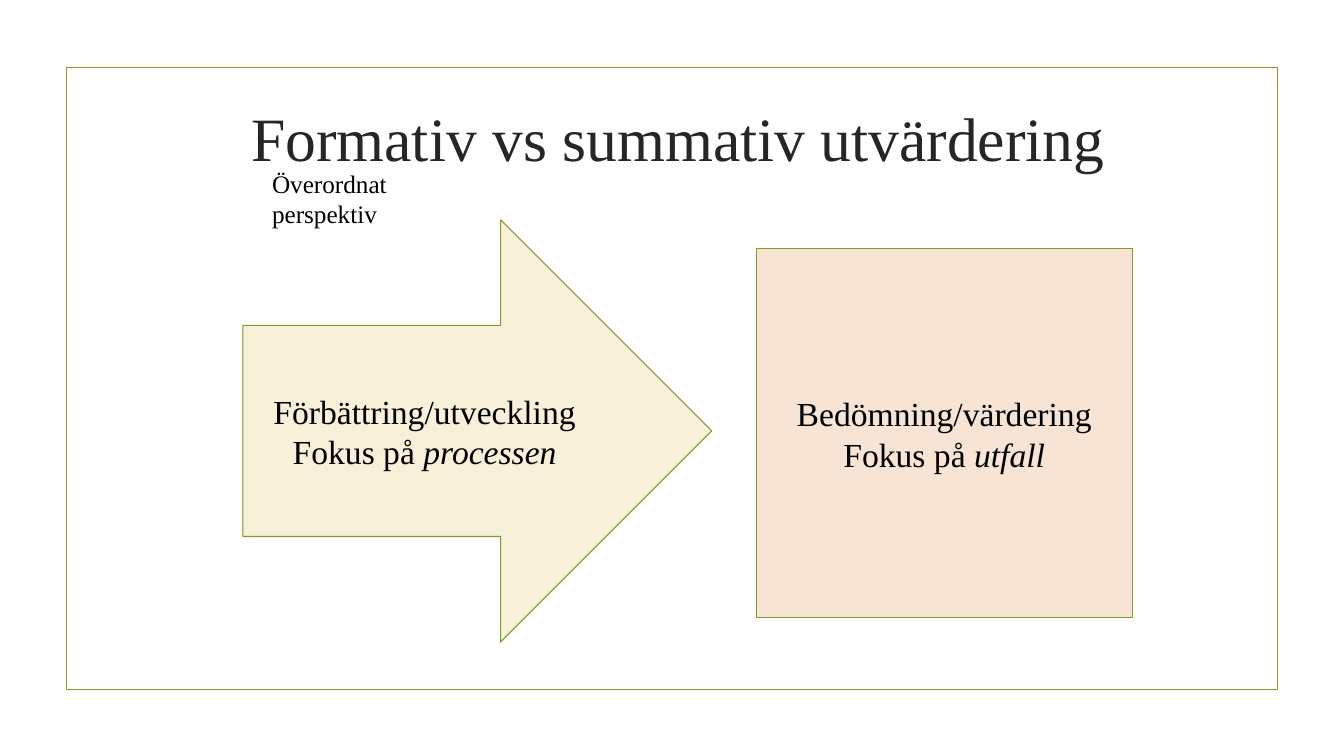
from pptx import Presentation
from pptx import util as u
from pptx.dml.color import RGBColor
from pptx.enum import shapes, text

WIDTH, HEIGHT = 13.33, 7.5
FONT = "Times New Roman"
COLOURS = {"olive": "83992A", "peach": "F7E4D4", "cream": "F8F0D9",
           "title": "262626", "black": "000000"}

# Content: each paragraph is a list of (text, italic) runs
TITLE = [[("Formativ vs summativ utvärdering", False)]]
PERSPECTIVE = [[("Överordnat perspektiv", False)]]
SUMMATIVE = [[("Bedömning/värdering", False)],
             [("Fokus på ", False), ("utfall", True)]]
FORMATIVE = [[("Förbättring/utveckling", False)],
             [("Fokus på ", False), ("processen", True)]]

# Places: left, top, width, height in inches
MARGIN = 0.66
FRAME = (MARGIN, MARGIN + 0.01, WIDTH - 2 * MARGIN, HEIGHT - 2 * MARGIN - 0.01)
TITLE_BOX = (2.23, 0.73, 9, 1.25)
SQUARE = (7.5, 2.47, 3.73, 3.66)
ARROW = (2.41, 2.18, 4.65, 4.19)
PERSPECTIVE_BOX = (2.6, 1.62, 1.5, 0.7)

presentation = Presentation()
presentation.slide_width = u.Inches(WIDTH)
presentation.slide_height = u.Inches(HEIGHT)
slide = presentation.slides.add_slide(presentation.slide_layouts[6])


def colour(name):
    return RGBColor.from_string(COLOURS[name])


def write(shape, paragraphs, size=24, ink="black",
          align=text.PP_ALIGN.CENTER, anchor=text.MSO_ANCHOR.MIDDLE):
    frame = shape.text_frame
    frame.word_wrap = True
    frame.vertical_anchor = anchor
    for index, runs in enumerate(paragraphs):
        paragraph = frame.add_paragraph() if index else frame.paragraphs[0]
        paragraph.alignment = align
        for words, italic in runs:
            run = paragraph.add_run()
            run.text = words
            run.font.name = FONT
            run.font.size = u.Pt(size)
            run.font.italic = italic
            run.font.color.rgb = colour(ink)


def add_outline(kind, place, line_width=0.75, fill=None):
    shape = slide.shapes.add_shape(kind, *map(u.Inches, place))
    shape.shadow.inherit = False
    if fill:
        shape.fill.solid()
        shape.fill.fore_color.rgb = colour(fill)
    else:
        shape.fill.background()
    shape.line.color.rgb = colour("olive")
    shape.line.width = u.Pt(line_width)
    return shape


def add_text_box(place):
    return slide.shapes.add_textbox(*map(u.Inches, place))


# Frame and title
add_outline(shapes.MSO_SHAPE.RECTANGLE, FRAME, line_width=1.25)
write(add_text_box(TITLE_BOX), TITLE, size=44, ink="title")

# Summative square and formative arrow
write(add_outline(shapes.MSO_SHAPE.RECTANGLE, SQUARE, fill="peach"), SUMMATIVE)
write(add_outline(shapes.MSO_SHAPE.RIGHT_ARROW, ARROW, fill="cream"), FORMATIVE)

# Perspective label
write(add_text_box(PERSPECTIVE_BOX), PERSPECTIVE, size=18,
      align=text.PP_ALIGN.LEFT, anchor=text.MSO_ANCHOR.TOP)

presentation.save("out.pptx")
